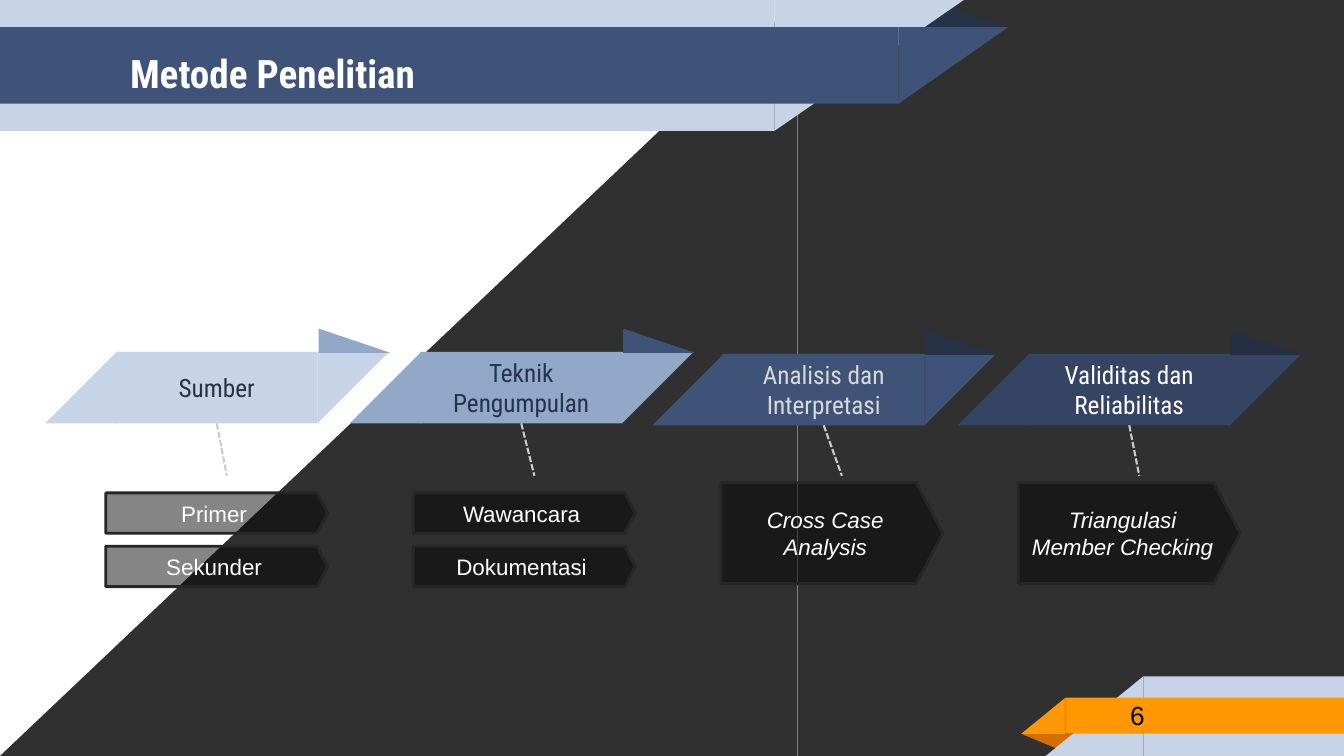
from lxml.etree import SubElement
from pptx import Presentation
from pptx.dml.color import RGBColor
from pptx.enum.dml import MSO_LINE
from pptx.enum.shapes import MSO_CONNECTOR, MSO_SHAPE
from pptx.enum.text import MSO_ANCHOR, PP_ALIGN
from pptx.oxml.ns import qn
from pptx.util import Inches, Pt

HEAD = "Roboto Condensed"
PALE, NAVY, DARK, GOLD = "C7D3E6", "3F5378", "263248", "FF9800"
RECT = MSO_SHAPE.RECTANGLE
WEDGE = MSO_SHAPE.RIGHT_TRIANGLE
PEAK = MSO_SHAPE.ISOSCELES_TRIANGLE
PLATE = MSO_SHAPE.PENTAGON


def paint(target, color, alpha=None):
    target.solid()
    target.fore_color.rgb = RGBColor.from_string(color)
    if alpha:
        node = target._xPr.find(qn("a:solidFill"))[0]
        SubElement(node, qn("a:alpha")).set("val", str(alpha * 1000))


def write(shape, text, size=18, font="Arial", color="FFFFFF", bold=False,
          italic=False, align=PP_ALIGN.CENTER, pad=0.1):
    frame = shape.text_frame
    frame.word_wrap = True
    frame.vertical_anchor = MSO_ANCHOR.MIDDLE
    frame.margin_left = frame.margin_right = Inches(0.1)
    frame.margin_top = frame.margin_bottom = Inches(pad)
    frame.text = text
    for para in frame.paragraphs:
        para.alignment = align
        para.font.name = font
        para.font.size = Pt(size)
        para.font.bold = bold
        para.font.italic = italic
        para.font.color.rgb = RGBColor.from_string(color)


def block(slide, kind, box, color, alpha=None, flip=None, turn=0, adj=None):
    shape = slide.shapes.add_shape(kind, *map(Inches, box))
    shape.shadow.inherit = False
    paint(shape.fill, color, alpha)
    shape.line.fill.background()
    shape.rotation = turn
    if flip:
        shape._element.spPr.get_or_add_xfrm().set(flip, "1")
    if adj is not None:
        shape.adjustments[0] = adj
    return shape


def shade(slide):
    block(slide, RECT, (7.91, 0, 5.42, 7.5), "000000", alpha=81)
    block(slide, WEDGE, (0, 0, 7.91, 7.5), "000000", alpha=81, flip="flipH")


def banner(slide):
    block(slide, PEAK, (8.9, 0.02, 1.1, 0.25), DARK, adj=0.324)
    for top, wide, slant, high, color in (
            (0, 7.68, 1.88, 1.3, PALE), (0.27, 8.91, 1.09, 0.76, NAVY)):
        block(slide, RECT, (0, top, wide, high), color)
        block(slide, WEDGE, (wide, top, slant, high), color, flip="flipV")
    title = slide.shapes.title
    title.left, title.top, title.width, title.height = map(
        Inches, (1.19, 0.27, 7.67, 0.91))
    write(title, "Metode Penelitian", size=28, font=HEAD, bold=True,
          align=PP_ALIGN.LEFT)
    slide.shapes._spTree.append(title._element)


def footer(slide):
    block(slide, PEAK, (10.13, 7.28, 0.57, 0.16), "D26F00", turn=180, adj=0.324)
    for left, top, slant, high, color in (
            (11.34, 6.71, 0.98, 0.8, PALE), (10.57, 6.92, 0.44, 0.36, GOLD)):
        block(slide, RECT, (left, top, 13.33 - left, high), color)
        block(slide, WEDGE, (left - slant, top, slant, high), color, flip="flipH")
    number = slide.shapes.add_textbox(*map(Inches, (11.11, 6.86, 2.17, 0.46)))
    write(number, "6", size=18.7, color="000000", align=PP_ALIGN.LEFT)


def ribbon(slide, left, top, text, color, fold, ink):
    side = 0.71
    tab = block(slide, RECT, (left, top, 2, side), color)
    write(tab, text, font=HEAD, color=ink)
    block(slide, WEDGE, (left - 0.7, top, side, side), color, flip="flipH")
    block(slide, WEDGE, (left + 2, top, side, side), color, flip="flipV")
    block(slide, PEAK, (left + 2.01, top - 0.23, side, 0.24), fold, adj=0)
    return tab


def dash(slide, tab, end):
    line = slide.shapes.add_connector(
        MSO_CONNECTOR.STRAIGHT, 0, 0, Inches(end), Inches(4.72))
    line.begin_connect(tab, 2)
    line.line.color.rgb = RGBColor.from_string("CCCCCC")
    line.line.width = Pt(1.5)
    line.line.dash_style = MSO_LINE.SQUARE_DOT
    SubElement(line._element.spPr, qn("a:effectLst"))


def plate(slide, left, top, high, text, italic):
    shape = block(slide, PLATE, (left, top, 2.2, high), "000000",
                  alpha=48, adj=0.262)
    paint(shape.line.fill, "262626")
    shape.line.width = Pt(2)
    write(shape, text, size=16, italic=italic, pad=0.05)


def main():
    deck = Presentation()
    deck.slide_width, deck.slide_height = Inches(13.33), Inches(7.5)
    slide = deck.slides.add_slide(deck.slide_layouts[5])
    shade(slide)
    banner(slide)
    footer(slide)
    steps = (
        (1.15, 3.49, "Sumber", PALE, "92A8C8", DARK,
         1.05, ("Primer", "Sekunder")),
        (4.17, 3.49, "Teknik Pengumpulan", "92A8C8", NAVY, DARK,
         4.1, ("Wawancara", "Dokumentasi")),
        (7.17, 3.51, "Analisis dan Interpretasi", NAVY, DARK, "D9D9D9",
         7.15, ("Cross Case Analysis",)),
        (10.2, 3.51, "Validitas dan Reliabilitas", "344462", "242F44", "FFFFFF",
         10.1, ("Triangulasi\nMember Checking",)),
    )
    for left, top, text, color, fold, ink, start, items in steps:
        tab = ribbon(slide, left, top, text, color, fold, ink)
        dash(slide, tab, start + 1.2)
        single = len(items) == 1
        first, high = (4.79, 1) if single else (4.89, 0.4)
        for row, item in enumerate(items):
            plate(slide, start, first + row * 0.53, high, item, single)
    deck.save("out.pptx")


if __name__ == "__main__":
    main()
